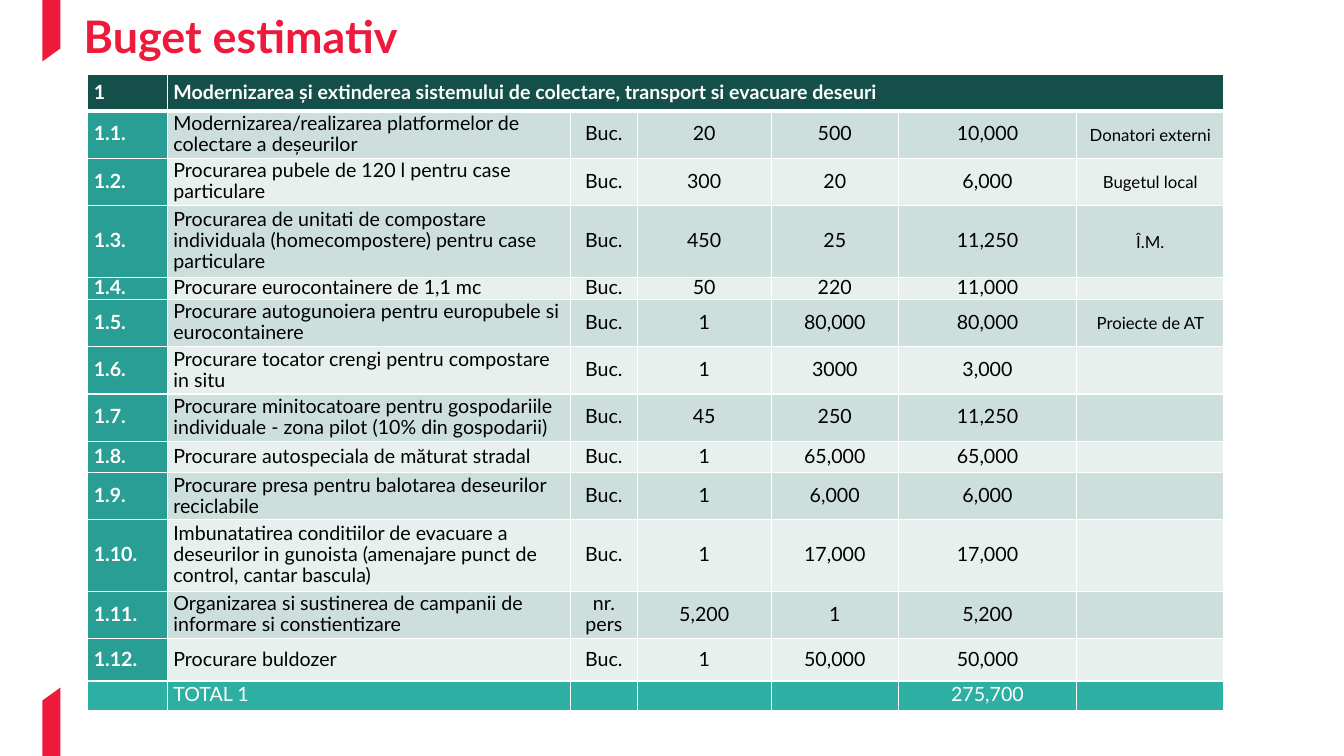
from dataclasses import dataclass

from lxml import etree
from pptx import Presentation
from pptx import util as u
from pptx.dml.color import RGBColor
from pptx.enum import text
from pptx.oxml.ns import qn

PX = 9144  # EMU per px, 100 px to the inch


@dataclass(frozen=True)
class Theme:
    font: str = "Lato"
    red: str = "ED1A3B"
    white: str = "FFFFFF"
    black: str = "000000"
    heading: str = "144F4A"
    number: str = "299E94"
    total: str = "2EAFA4"
    bands: tuple = ("CDDFDC", "E8F0EE")
    title_size: int = 32
    body_size: int = 14
    source_size: int = 12


THEME = Theme()

COLUMN_WIDTHS = [79, 400, 66, 133, 126, 177, 146]
HEADING_HEIGHT, TOTAL_HEIGHT = 36, 29
HEADING = ["1", "Modernizarea și extinderea sistemului de colectare, transport si evacuare deseuri"]
TOTAL = ["", "TOTAL 1", "", "", "", "275,700", ""]

# Row height, activity, unit, quantity, unit price, sum, source of funds
ACTIVITIES = [
    (47, "Modernizarea/realizarea platformelor de colectare a deșeurilor",
     "Buc.", "20", "500", "10,000", "Donatori externi"),
    (47, "Procurarea pubele de 120 l pentru case particulare",
     "Buc.", "300", "20", "6,000", "Bugetul local"),
    (71, "Procurarea de unitati de compostare individuala (homecompostere) pentru case particulare",
     "Buc.", "450", "25", "11,250", "Î.M."),
    (22, "Procurare eurocontainere de 1,1 mc", "Buc.", "50", "220", "11,000", ""),
    (47, "Procurare autogunoiera pentru europubele si eurocontainere",
     "Buc.", "1", "80,000", "80,000", "Proiecte de AT"),
    (47, "Procurare tocator crengi pentru compostare in situ",
     "Buc.", "1", "3000", "3,000", ""),
    (47, "Procurare minitocatoare pentru gospodariile individuale - zona pilot (10% din gospodarii)",
     "Buc.", "45", "250", "11,250", ""),
    (31, "Procurare autospeciala de măturat stradal", "Buc.", "1", "65,000", "65,000", ""),
    (47, "Procurare presa pentru balotarea deseurilor reciclabile",
     "Buc.", "1", "6,000", "6,000", ""),
    (71, "Imbunatatirea conditiilor de evacuare a deseurilor in gunoista "
         "(amenajare punct de control, cantar bascula)",
     "Buc.", "1", "17,000", "17,000", ""),
    (47, "Organizarea si sustinerea de campanii de informare si constientizare",
     "nr. pers", "5,200", "1", "5,200", ""),
    (42, "Procurare buldozer", "Buc.", "1", "50,000", "50,000", ""),
]


def write(frame, words, size=THEME.body_size, color=THEME.black, bold=False,
          align=text.PP_ALIGN.LEFT, spacing=u.Pt(15)):
    """Put one formatted paragraph into a text frame."""
    paragraph = frame.paragraphs[0]
    paragraph.alignment = align
    paragraph.line_spacing = spacing
    if not words:
        # Keeps an empty cell from stretching its row
        etree.SubElement(paragraph._p, qn("a:endParaRPr"), sz=str(size * 100))
        return
    run = paragraph.add_run()
    run.text = words
    run.font.name = THEME.font
    run.font.size = u.Pt(size)
    run.font.bold = bold
    run.font.color.rgb = RGBColor.from_string(color)


def add_marker(slide, corners):
    """Slanted red bar on the left edge."""
    start, *others = corners
    builder = slide.shapes.build_freeform(*start, scale=PX)
    builder.add_line_segments(others, close=True)
    marker = builder.convert_to_shape()
    marker.shadow.inherit = False
    marker.fill.solid()
    marker.fill.fore_color.rgb = RGBColor.from_string(THEME.red)
    marker.line.fill.background()


def add_title(slide, words):
    title = slide.shapes.title
    title.left, title.top, title.width, title.height = (n * PX for n in (73, -3, 1260, 73))
    frame = title.text_frame
    frame.auto_size = text.MSO_AUTO_SIZE.NONE
    frame.vertical_anchor = text.MSO_ANCHOR.MIDDLE
    write(frame, words, size=THEME.title_size, color=THEME.red, bold=True, spacing=1.05)


def set_borders(cell, top=1, bottom=1):
    """White borders, widths in points."""
    properties = cell._tc.get_or_add_tcPr()
    for side, width in (("L", 1), ("R", 1), ("T", top), ("B", bottom)):
        line = etree.SubElement(properties, qn(f"a:ln{side}"), w=str(u.Pt(width)))
        fill = etree.SubElement(line, qn("a:solidFill"))
        etree.SubElement(fill, qn("a:srgbClr"), val=THEME.white)


def fill_cell(cell, words, fill, top=1, bottom=1, **style):
    cell.margin_left = cell.margin_right = 6 * PX
    cell.margin_top = cell.margin_bottom = 0
    cell.vertical_anchor = text.MSO_ANCHOR.MIDDLE
    set_borders(cell, top, bottom)
    cell.fill.solid()
    cell.fill.fore_color.rgb = RGBColor.from_string(fill)
    write(cell.text_frame, words, **style)


def column_style(column):
    """Numbers and activities stand left, the rest centred, sources smaller."""
    return {
        "align": text.PP_ALIGN.LEFT if column < 2 else text.PP_ALIGN.CENTER,
        "size": THEME.source_size if column == 6 else THEME.body_size,
    }


def add_budget(slide):
    heights = [HEADING_HEIGHT, *(activity[0] for activity in ACTIVITIES), TOTAL_HEIGHT]
    budget = slide.shapes.add_table(
        len(heights), len(COLUMN_WIDTHS), 87 * PX, 74 * PX,
        sum(COLUMN_WIDTHS) * PX, sum(heights) * PX).table
    budget.first_row = budget.horz_banding = False
    for column, width in zip(budget.columns, COLUMN_WIDTHS):
        column.width = width * PX
    for row, height in zip(budget.rows, heights):
        row.height = height * PX

    # Heading row
    budget.cell(0, 1).merge(budget.cell(0, 6))
    for column, words in enumerate(HEADING):
        fill_cell(budget.cell(0, column), words, THEME.heading, bottom=3,
                  color=THEME.white, bold=True)

    # Activities
    for number, (_, *details) in enumerate(ACTIVITIES, 1):
        top = 3 if number == 1 else 1
        fill_cell(budget.cell(number, 0), f"1.{number}.", THEME.number, top=top,
                  color=THEME.white, bold=True)
        band = THEME.bands[(number - 1) % 2]
        for column, words in enumerate(details, 1):
            fill_cell(budget.cell(number, column), words, band, top=top,
                      **column_style(column))

    # Total row
    for column, words in enumerate(TOTAL):
        fill_cell(budget.cell(len(heights) - 1, column), words, THEME.total,
                  color=THEME.white, **column_style(column))


def main():
    deck = Presentation()
    deck.slide_width, deck.slide_height = 1333 * PX, 750 * PX
    slide = deck.slides.add_slide(deck.slide_layouts[5])

    add_marker(slide, [(60, 48), (60, 0), (42, 0), (42, 61)])
    add_marker(slide, [(42, 695), (42, 750), (60, 750), (60, 682)])
    add_title(slide, "Buget estimativ")
    add_budget(slide)

    deck.save("out.pptx")


if __name__ == "__main__":
    main()
